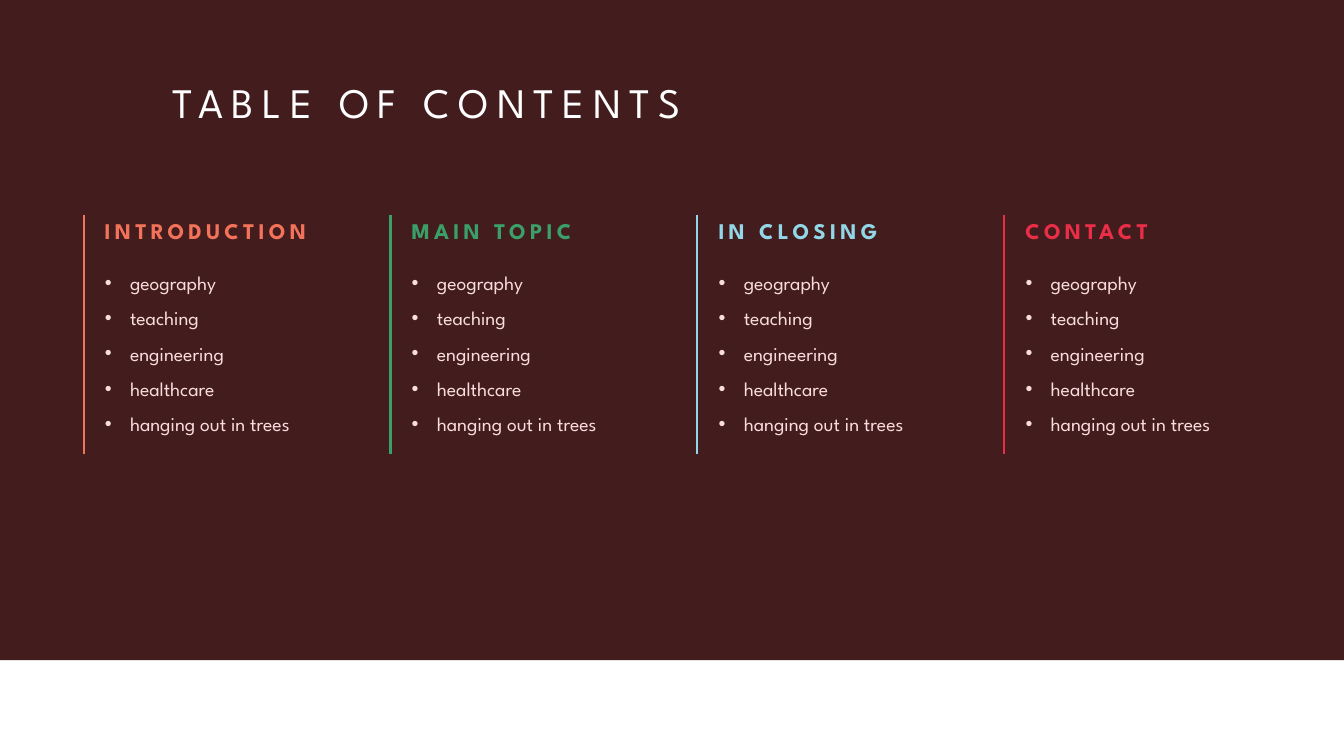
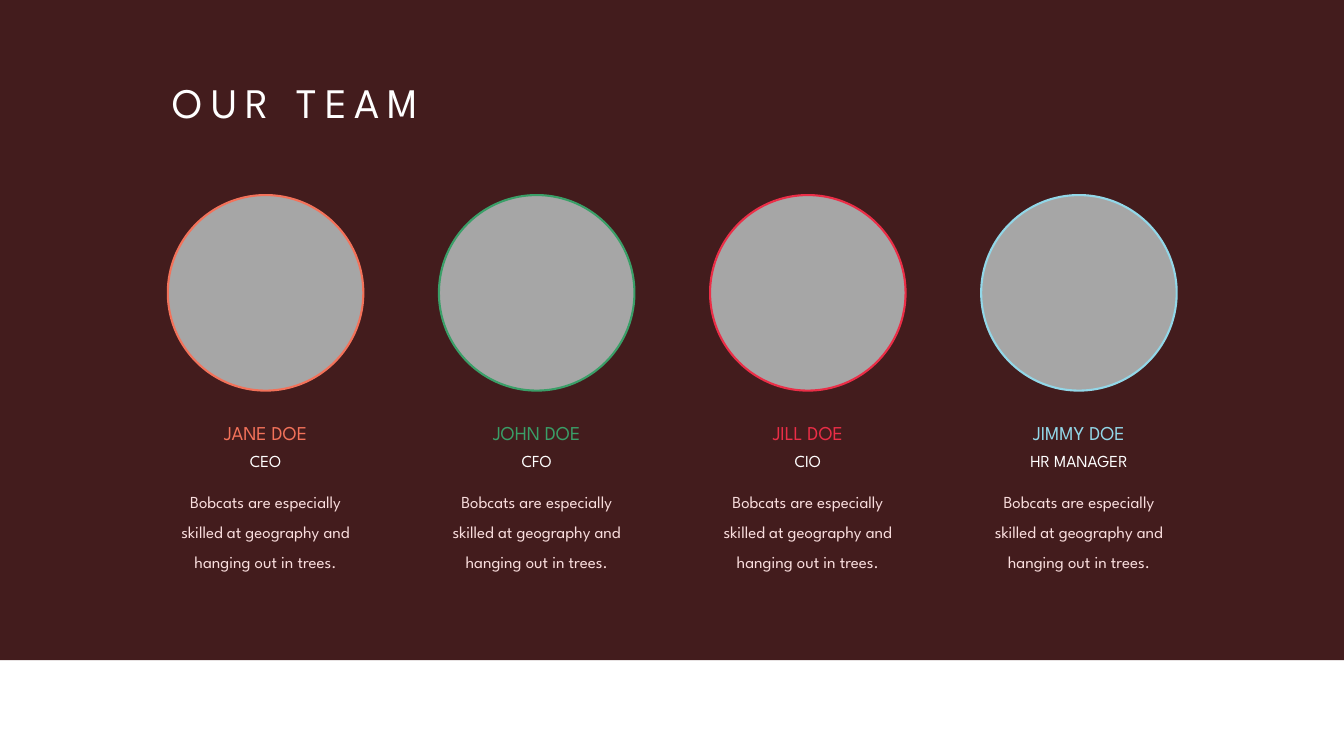
from lxml import etree
from pptx import Presentation
from pptx.dml.color import RGBColor
from pptx.enum import shapes, text
from pptx.oxml import ns
from pptx.util import Inches, Pt

MAROON = RGBColor(0x43, 0x1C, 0x1D)
WHITE = RGBColor(0xFF, 0xFF, 0xFF)
BLUSH = RGBColor(0xF9, 0xDD, 0xDD)
GREY = RGBColor(0xA6, 0xA6, 0xA6)
CORAL = RGBColor(0xF3, 0x72, 0x5A)
GREEN = RGBColor(0x3A, 0x9F, 0x68)
SKY = RGBColor(0x92, 0xD7, 0xE8)
RED = RGBColor(0xEB, 0x2E, 0x47)

FONT = "League Spartan"
LEFT, CENTER = text.PP_ALIGN.LEFT, text.PP_ALIGN.CENTER
TITLE_ONLY, COMPARISON = 5, 4  # layouts of the default template

SECTIONS = [("INTRODUCTION", CORAL), ("MAIN TOPIC", GREEN),
            ("IN CLOSING", SKY), ("CONTACT", RED)]
TOPICS = ["geography", "teaching", "engineering", "healthcare",
          "hanging out in trees"]
# name, width of name, role, width of role, accent
TEAM = [("JANE DOE", 2.05, "CEO", 0.88, CORAL),
        ("JOHN DOE", 2.15, "CFO", 0.88, GREEN),
        ("JILL DOE", 1.78, "CIO", 0.78, RED),
        ("JIMMY DOE", 2.31, "HR MANAGER", 2.47, SKY)]
BIO = "Bobcats are especially skilled at geography and hanging out in trees."


def set_all(target, values):
    for key, value in values.items():
        setattr(target, key, value)


def add_bullet(paragraph):
    props = paragraph._p.get_or_add_pPr()
    props.set("marL", str(Inches(0.5)))
    props.set("indent", str(Inches(-0.5)))
    etree.SubElement(props, ns.qn("a:buFont")).set("typeface", "Arial")
    etree.SubElement(props, ns.qn("a:buChar")).set("char", "•")


class Deck:
    def __init__(self):
        self.prs = Presentation()
        self.prs.slide_width = Inches(26.67)
        self.prs.slide_height = Inches(15)
        self.slide = None

    def add_slide(self, layout, title):
        self.slide = self.prs.slides.add_slide(self.prs.slide_layouts[layout])
        heading = self.slide.shapes.title
        self.place(heading, 3.33, 1.47, 14.02, 1.11)
        self.fill_text(heading, [title], 60, WHITE, tracking=12)

    def add_master_band(self):
        """Draw the dark band and hand it to the master, behind every slide."""
        band = self.shape(shapes.MSO_SHAPE.RECTANGLE, 0, 0, 26.67, 13.1, MAROON)
        self.prs.slide_master.shapes._spTree.insert(2, band._element)

    def place(self, item, left, top, width, height):
        set_all(item, {"left": Inches(left), "top": Inches(top),
                       "width": Inches(width), "height": Inches(height)})

    def fill_text(self, item, lines, size, color, bold=False, tracking=0,
                  align=LEFT, spacing=None, bullets=False, wrap=True):
        frame = item.text_frame
        set_all(frame, {"word_wrap": wrap,
                        "auto_size": text.MSO_AUTO_SIZE.SHAPE_TO_FIT_TEXT,
                        "vertical_anchor": text.MSO_ANCHOR.TOP})
        for number, line in enumerate(lines):
            paragraph = frame.add_paragraph() if number else frame.paragraphs[0]
            if bullets:
                add_bullet(paragraph)
            set_all(paragraph, {"alignment": align, "line_spacing": spacing,
                                "space_before": Pt(0)})
            run = paragraph.add_run()
            run.text = line
            set_all(run.font, {"name": FONT, "size": Pt(size), "bold": bold})
            run.font.color.rgb = color
            if tracking:
                run.font._element.set("spc", str(tracking * 100))

    def label(self, line, left, top, width, height, size, color, **style):
        box = self.slide.shapes.add_textbox(0, 0, 0, 0)
        self.place(box, left, top, width, height)
        self.fill_text(box, [line], size, color, **style)

    def bullet_list(self, holder, lines, left, top, width, height):
        self.place(holder, left, top, width, height)
        self.fill_text(holder, lines, 28, BLUSH, spacing=1.5, bullets=True)

    def shape(self, kind, left, top, width, height, fill, outline=None):
        item = self.slide.shapes.add_shape(kind, 0, 0, 0, 0)
        self.place(item, left, top, width, height)
        item.shadow.inherit = False
        item.fill.solid()
        item.fill.fore_color.rgb = fill
        if outline is None:
            item.line.fill.background()
        else:
            item.line.color.rgb = outline
            item.line.width = Pt(3)
        return item

    def rule(self, x, top, bottom, color):
        line = self.slide.shapes.add_connector(
            shapes.MSO_CONNECTOR.STRAIGHT,
            Inches(x), Inches(top), Inches(x), Inches(bottom))
        line.line.color.rgb = color
        line.line.width = Pt(3)
        etree.SubElement(line._element.spPr, ns.qn("a:effectLst"))


def add_contents(deck):
    holders = list(deck.slide.placeholders)[1:]
    for column, (section, accent) in enumerate(SECTIONS):
        left = 1.98 + 6.09 * column
        deck.label(section, left, 4.25, 4.75, 0.64, 32, accent,
                   bold=True, tracking=6)
        deck.bullet_list(holders[column], TOPICS, left, 5.09, 4.75, 3.58)
        deck.rule(left - 0.32, 4.26, 9.01, accent)


def add_team(deck):
    portrait = 3.88
    for column, (name, name_width, role, role_width, accent) in enumerate(TEAM):
        left = 3.33 + 5.38 * column
        middle = left + portrait / 2
        deck.shape(shapes.MSO_SHAPE.OVAL, left, 3.87, portrait, portrait,
                   GREY, accent)
        deck.label(name, middle - name_width / 2, 8.3, name_width, 0.57,
                   28, accent, align=CENTER, wrap=False)
        deck.label(role, middle - role_width / 2, 8.9, role_width, 0.5,
                   24, WHITE, align=CENTER, wrap=False)
        deck.label(BIO, left, 9.5, portrait, 1.87, 24, BLUSH,
                   align=CENTER, spacing=1.5)


def main():
    deck = Deck()
    deck.add_slide(COMPARISON, "TABLE OF CONTENTS")
    deck.add_master_band()
    add_contents(deck)
    deck.add_slide(TITLE_ONLY, "OUR TEAM")
    add_team(deck)
    deck.prs.save("out.pptx")


if __name__ == "__main__":
    main()
